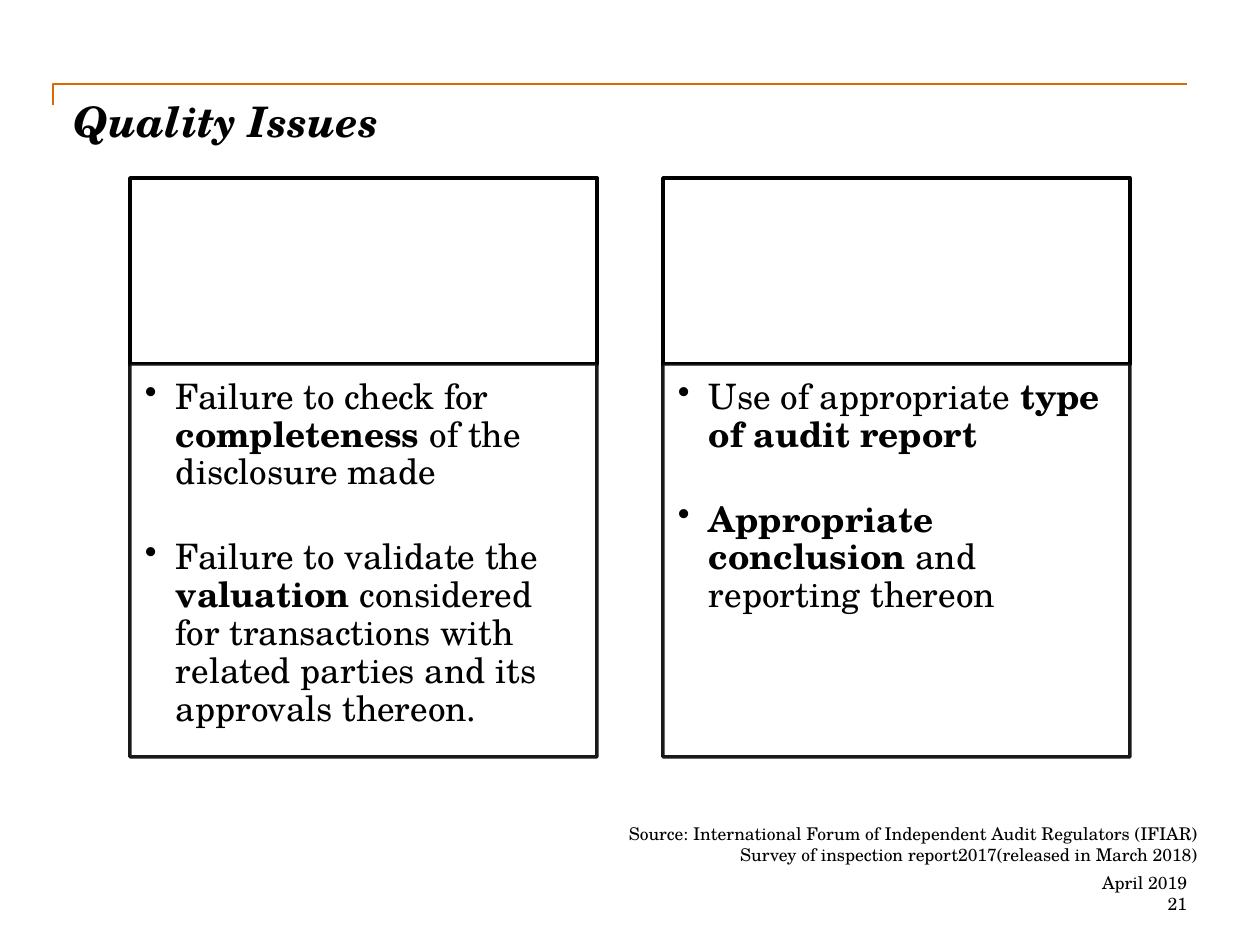
from dataclasses import dataclass

from lxml.etree import SubElement
from pptx import Presentation
from pptx.dml.color import RGBColor
from pptx.enum.shapes import MSO_SHAPE
from pptx.enum.text import MSO_ANCHOR, MSO_AUTO_SIZE, PP_ALIGN
from pptx.oxml.ns import qn
from pptx.util import Emu, Pt

PX_PER_INCH = 126


@dataclass(frozen=True)
class Theme:
    font: str = "TeX Gyre Schola"
    ink: RGBColor = RGBColor(0, 0, 0)
    paper: RGBColor = RGBColor(255, 255, 255)
    accent: RGBColor = RGBColor(0xDC, 0x69, 0x00)
    title_size: int = 24
    body_size: int = 20
    note_size: int = 10


THEME = Theme()

CARD_LEFT, CARD_TOP, CARD_WIDTH, CARD_STEP = 130, 178, 467, 533
HEADER_HEIGHT, BODY_HEIGHT = 186, 393
CARDS = [
    [
        [("Failure to check for ", False), ("completeness ", True),
         ("of the disclosure made", False)],
        [("Failure to validate the ", False), ("valuation ", True),
         ("considered for transactions with related parties and its approvals thereon.", False)],
    ],
    [
        [("Use of appropriate ", False), ("type of audit report", True)],
        [("Appropriate conclusion", True), (" and reporting thereon", False)],
    ],
]
NOTES = [
    ((494, 823, 703, 53), ["Source: International Forum of Independent Audit Regulators (IFIAR)",
                           "Survey of inspection report2017(released in March 2018)"]),
    ((977, 872, 210, 21), ["April 2019"]),
    ((977, 893, 210, 21), ["21"]),
]


def px(value):
    return Emu(round(value * 914400 / PX_PER_INCH))


def style_run(run, size, bold=False, italic=False):
    font = run.font
    font.name, font.size = THEME.font, Pt(size)
    font.bold, font.italic = bold, italic
    font.color.rgb = THEME.ink


def set_frame(text_frame, left=0, top=0, right=0, bottom=0):
    text_frame.word_wrap = True
    text_frame.auto_size = MSO_AUTO_SIZE.NONE
    text_frame.vertical_anchor = MSO_ANCHOR.TOP
    text_frame.margin_left, text_frame.margin_top = px(left), px(top)
    text_frame.margin_right, text_frame.margin_bottom = px(right), px(bottom)


def set_title(slide, text):
    title = slide.shapes.title
    title.left, title.top, title.width, title.height = map(px, (73, 95, 1113, 126))
    set_frame(title.text_frame)
    title.text_frame.text = text
    paragraph = title.text_frame.paragraphs[0]
    paragraph.alignment = PP_ALIGN.LEFT
    style_run(paragraph.runs[0], THEME.title_size, bold=True, italic=True)


def add_title_rule(slide):
    builder = slide.shapes.build_freeform(px(53), px(105))
    builder.add_line_segments([(px(53), px(84)), (px(1187), px(84))], close=False)
    shape = builder.convert_to_shape()
    shape.shadow.inherit = False
    shape.fill.background()
    shape.line.color.rgb = THEME.accent
    shape.line.width = Pt(1)


def add_panel(slide, left, top, width, height):
    shape = slide.shapes.add_shape(MSO_SHAPE.RECTANGLE, *map(px, (left, top, width, height)))
    shape.shadow.inherit = False
    shape.fill.solid()
    shape.fill.fore_color.rgb = THEME.paper
    shape.line.color.rgb = THEME.ink
    shape.line.width = Pt(2)
    return shape


def set_opacity(shape, percent):
    for color in shape._element.spPr.iter(qn("a:srgbClr")):
        SubElement(color, qn("a:alpha"), val=str(percent * 1000))


def set_bullet(paragraph, indent):
    properties = paragraph._p.get_or_add_pPr()
    properties.set("marL", str(px(indent)))
    properties.set("indent", str(-px(indent)))
    SubElement(properties, qn("a:buChar"), char="•")


def add_bullets(text_frame, items):
    for index, parts in enumerate(items):
        paragraph = text_frame.add_paragraph() if index else text_frame.paragraphs[0]
        paragraph.alignment = PP_ALIGN.LEFT
        paragraph.line_spacing = 0.9
        paragraph.space_after = Pt(27)
        set_bullet(paragraph, 31)
        for text, bold in parts:
            run = paragraph.add_run()
            run.text = text
            style_run(run, THEME.body_size, bold)


def add_card(slide, left, items):
    add_panel(slide, left, CARD_TOP, CARD_WIDTH, HEADER_HEIGHT)
    body = add_panel(slide, left, CARD_TOP + HEADER_HEIGHT, CARD_WIDTH, BODY_HEIGHT)
    set_opacity(body, 90)
    set_frame(body.text_frame, 15, 15, 20, 21)
    add_bullets(body.text_frame, items)


def add_note(slide, box, lines):
    text_frame = slide.shapes.add_textbox(*map(px, box)).text_frame
    set_frame(text_frame)
    text_frame.text = "\n".join(lines)
    for paragraph in text_frame.paragraphs:
        paragraph.alignment = PP_ALIGN.RIGHT
        style_run(paragraph.runs[0], THEME.note_size)


def main():
    presentation = Presentation()
    presentation.slide_width, presentation.slide_height = px(1260), px(945)
    slide = presentation.slides.add_slide(presentation.slide_layouts[5])
    add_title_rule(slide)
    set_title(slide, "Quality Issues")
    for index, items in enumerate(CARDS):
        add_card(slide, CARD_LEFT + index * CARD_STEP, items)
    for box, lines in NOTES:
        add_note(slide, box, lines)
    presentation.save("out.pptx")


if __name__ == "__main__":
    main()
